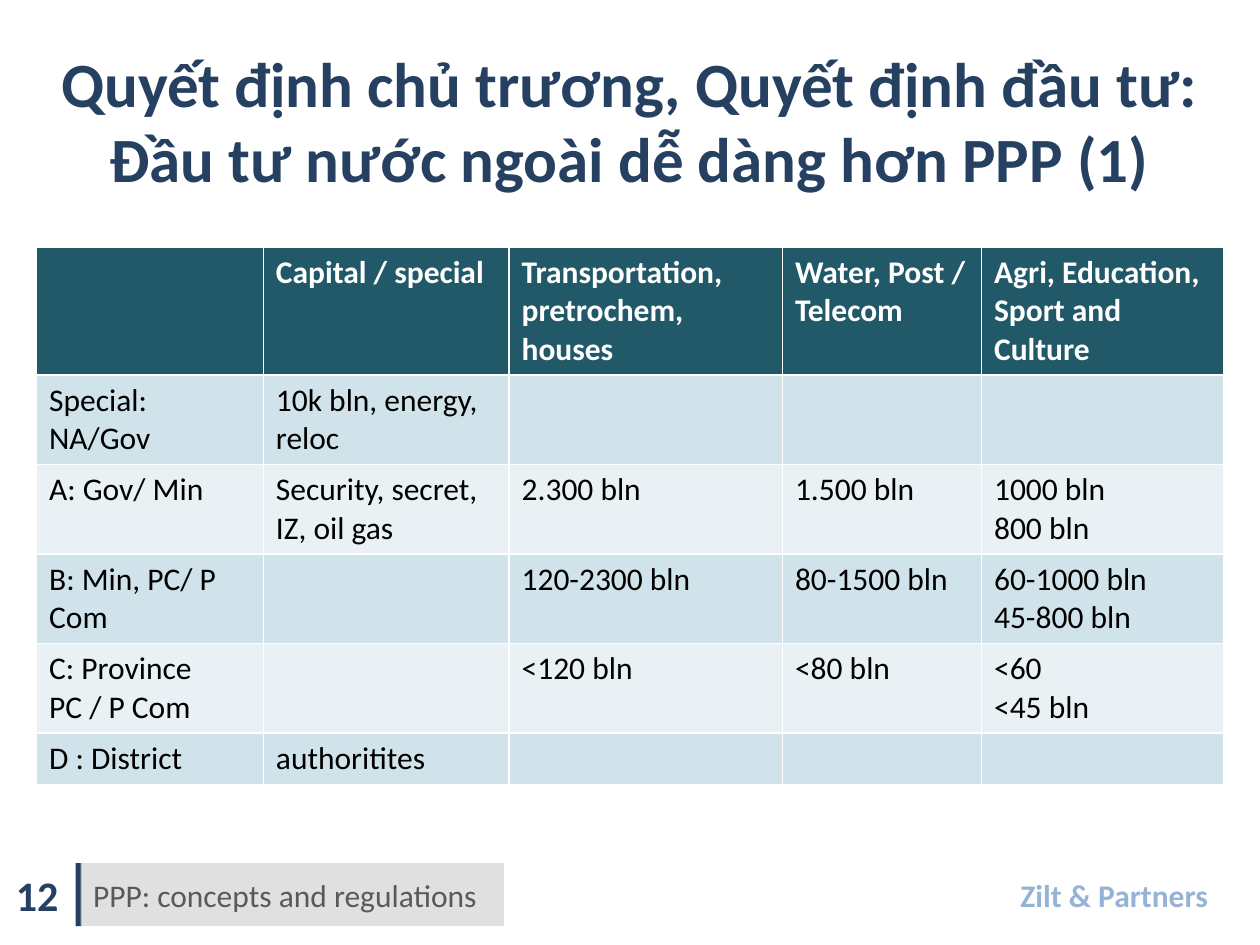
from dataclasses import dataclass

from lxml import etree
from pptx import Presentation
from pptx import util as u
from pptx.dml.color import RGBColor
from pptx.enum import shapes, text
from pptx.oxml.ns import qn


@dataclass(frozen=True)
class Theme:
    font: str = "Calibri"
    navy: str = "254061"
    teal: str = "215968"
    bands: tuple = ("D0E3EA", "E9F1F5")
    white: str = "FFFFFF"
    black: str = "000000"
    grey: str = "595959"
    panel: str = "D9D9D9"
    pale_blue: str = "95B3D7"
    title_size: int = 36
    number_size: int = 24
    body_size: int = 18


THEME = Theme()
COLUMN_WIDTHS = (1.8, 1.95, 2.17, 1.58, 1.92)
ROW_HEIGHT = 0.41
ROWS = (
    ("", "Capital / special", "Transportation, pretrochem, houses",
     "Water, Post / Telecom", "Agri, Education, Sport and Culture"),
    ("Special: NA/Gov", "10k bln, energy, reloc", "", "", ""),
    ("A: Gov/ Min", "Security, secret, IZ, oil gas", "2.300 bln",
     "1.500 bln", "1000 bln\n800 bln"),
    ("B: Min, PC/ P Com", "", "120-2300 bln", "80-1500 bln",
     "60-1000 bln\n45-800 bln"),
    ("C: Province PC / P Com", "", "<120 bln", "<80 bln", "<60\n<45 bln"),
    ("D : District", "authoritites", "", "", ""),
)


def write(frame, words, size, color, bold=False, align=text.PP_ALIGN.LEFT):
    frame.text = words
    for paragraph in frame.paragraphs:
        paragraph.alignment = align
        font = paragraph.font
        font.name = THEME.font
        font.size = u.Pt(size)
        font.bold = bold
        font.color.rgb = RGBColor.from_string(color)


def paint(fill, color):
    fill.solid()
    fill.fore_color.rgb = RGBColor.from_string(color)


def add_label(slide, box, words, size, color, **style):
    label = slide.shapes.add_textbox(*map(u.Inches, box))
    frame = label.text_frame
    frame.word_wrap = True
    frame.vertical_anchor = text.MSO_ANCHOR.MIDDLE
    write(frame, words, size, color, **style)
    return frame


def add_panel(slide, box, color):
    panel = slide.shapes.add_shape(
        shapes.MSO_SHAPE.RECTANGLE, *map(u.Inches, box))
    panel.shadow.inherit = False
    panel.line.fill.background()
    paint(panel.fill, color)
    return panel


def add_title(slide, box, words):
    frame = add_label(slide, box, words, THEME.title_size, THEME.navy,
                      bold=True, align=text.PP_ALIGN.CENTER)
    frame.word_wrap = False
    frame.auto_size = text.MSO_AUTO_SIZE.SHAPE_TO_FIT_TEXT
    frame.vertical_anchor = text.MSO_ANCHOR.TOP


def add_threshold_table(slide, left, top):
    table = slide.shapes.add_table(
        len(ROWS), len(COLUMN_WIDTHS), u.Inches(left), u.Inches(top),
        u.Inches(sum(COLUMN_WIDTHS)), u.Inches(ROW_HEIGHT * len(ROWS))).table
    for column, width in zip(table.columns, COLUMN_WIDTHS):
        column.width = u.Inches(width)
    for index, (row, words) in enumerate(zip(table.rows, ROWS)):
        row.height = u.Inches(ROW_HEIGHT)
        header = index == 0
        background = THEME.teal if header else THEME.bands[(index - 1) % 2]
        color = THEME.white if header else THEME.black
        for cell, entry in zip(row.cells, words):
            paint(cell.fill, background)
            write(cell.text_frame, entry, THEME.body_size, color, bold=header)


def add_footer(slide, top, height, number, topic, firm):
    add_panel(slide, (0.6, top, 0.05, height), THEME.navy)
    panel = add_panel(slide, (0.64, top, 3.36, height), THEME.panel)
    color = panel.fill._xPr.find(qn("a:solidFill"))[0]
    etree.SubElement(color, qn("a:alpha"), val="80000")
    panel.text_frame.vertical_anchor = text.MSO_ANCHOR.MIDDLE
    write(panel.text_frame, topic, THEME.body_size, THEME.grey)
    add_label(slide, (0, top, 0.59, height), number, THEME.number_size,
              THEME.navy, bold=True, align=text.PP_ALIGN.CENTER)
    add_label(slide, (8, top, 1.77, height), firm, THEME.body_size,
              THEME.pale_blue, bold=True)


def main():
    presentation = Presentation()
    presentation.slide_width = u.Inches(10)
    presentation.slide_height = u.Inches(7.5)
    slide = presentation.slides.add_slide(presentation.slide_layouts[6])
    add_threshold_table(slide, 0.29, 1.96)
    add_footer(slide, 6.85, 0.5, "12", "PPP: concepts and regulations",
               "Zilt & Partners")
    add_title(slide, (0.28, 0.3, 9.43, 1.31),
              "Quyết định chủ trương, Quyết định đầu tư:\v"
              "Đầu tư nước ngoài dễ dàng hơn PPP (1)")
    presentation.save("out.pptx")


if __name__ == "__main__":
    main()
